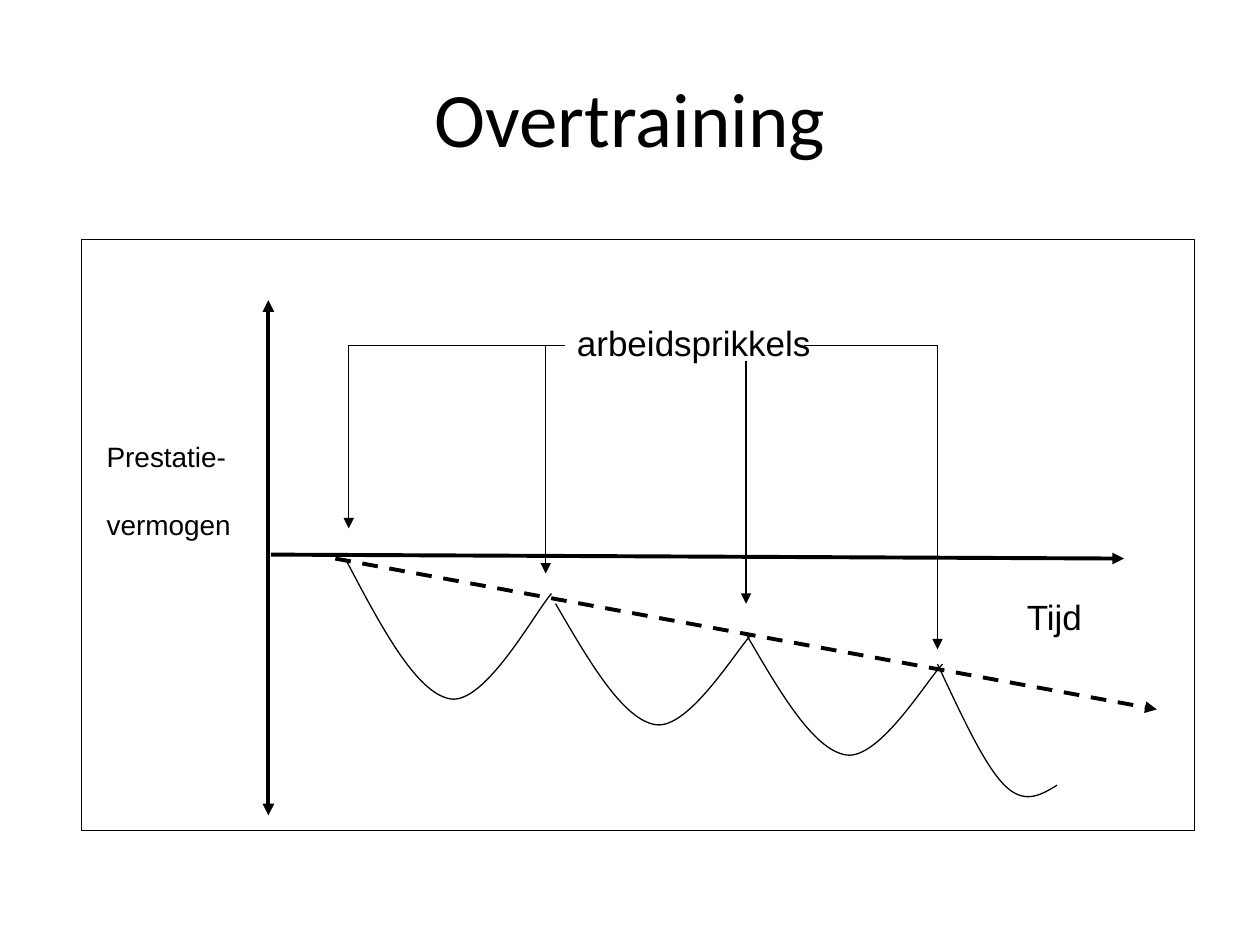
from lxml.etree import SubElement
from pptx import Presentation
from pptx.dml.color import RGBColor
from pptx.enum.dml import MSO_LINE as Dash
from pptx.enum.shapes import MSO_CONNECTOR as Connector, MSO_SHAPE as Shape
from pptx.enum.text import MSO_ANCHOR as Anchor, PP_ALIGN as Align
from pptx.oxml.ns import qn
from pptx.util import Cm, Pt

BLACK, WHITE = "000000", "FFFFFF"
THIN, THICK = 0.75, 2.25

# Bezier points of one training cycle, in cm from its start
CYCLE = [(0, 0), (0.68, 1.17), (1.36, 2.34), (2.02, 2.44),
         (2.69, 2.54), (3.66, 0.91), (3.96, 0.61)]
LAST_CYCLE = [(0, 0), (0.48, 1.02), (0.94, 2.03), (1.35, 2.44),
              (1.75, 2.84), (2.08, 2.64), (2.41, 2.44)]


def colour(value):
    return RGBColor.from_string(value)


def add_span(para, text, font, size):
    span = para.add_run()
    span.text = text
    span.font.name = font
    span.font.size = Pt(size)
    span.font.color.rgb = colour(BLACK)


def add_box(shapes, left, top, width, height, outlined=False):
    box = shapes.add_shape(Shape.RECTANGLE, Cm(left), Cm(top), Cm(width), Cm(height))
    box.shadow.inherit = False
    box.fill.solid()
    box.fill.fore_color.rgb = colour(WHITE)
    if outlined:
        box.line.color.rgb = colour(BLACK)
        box.line.width = Pt(THIN)
    else:
        box.line.fill.background()
    return box


def add_label(shapes, left, top, width, height, lines, size, gap=0):
    frame = add_box(shapes, left, top, width, height).text_frame
    frame.word_wrap = True
    frame.vertical_anchor = Anchor.TOP
    for index, text in enumerate(lines):
        para = frame.add_paragraph() if index else frame.paragraphs[0]
        para.alignment = Align.LEFT
        if index:
            para.space_before = Pt(gap)
        add_span(para, text, "Arial", size)


def add_line(shapes, start, end, width=THIN, arrow=True, dash=None):
    line = shapes.add_connector(Connector.STRAIGHT, *map(Cm, start + end))
    line.line.color.rgb = colour(BLACK)
    line.line.width = Pt(width)
    if dash:
        line.line.dash_style = dash
    if arrow:
        SubElement(line.line._get_or_add_ln(), qn("a:tailEnd"), type="triangle")
    SubElement(line._element.spPr, qn("a:effectLst"))


def add_curve(shapes, left, top, points, stretch=(1, 1)):
    places = [(Cm(left + x * stretch[0]), Cm(top + y * stretch[1])) for x, y in points]
    builder = shapes.build_freeform(*places[0])
    builder.add_line_segments(places[1:], close=False)
    curve = builder.convert_to_shape()
    curve.shadow.inherit = False
    curve.fill.background()
    curve.line.color.rgb = colour(BLACK)
    curve.line.width = Pt(THIN)
    # Turn every three straight segments into one cubic curve
    outline = next(curve._element.iter(qn("a:path")))
    segments = outline.findall(qn("a:lnTo"))
    for first in range(0, len(segments), 3):
        cubic = SubElement(outline, qn("a:cubicBezTo"))
        for segment in segments[first:first + 3]:
            cubic.append(segment[0])
            outline.remove(segment)


def add_title(page, left, top, width, height):
    title = page.shapes.title
    title.left, title.top, title.width, title.height = map(Cm, (left, top, width, height))
    title.text_frame.vertical_anchor = Anchor.MIDDLE
    para = title.text_frame.paragraphs[0]
    para.alignment = Align.CENTER
    add_span(para, "Overtraining", "Calibri", 44)


def add_diagram(page, left, top, width, height):
    shapes = page.shapes.add_group_shape().shapes

    def at(x, y):
        return left + x, top + y

    add_box(shapes, left, top, width, height, outlined=True)

    # Axes and falling trend
    add_line(shapes, at(3.76, 6.43), at(3.76, 1.22), THICK)
    add_line(shapes, at(3.81, 6.35), at(21.01, 6.43), THICK)
    add_line(shapes, at(3.76, 6.43), at(3.76, 11.61), THICK)
    add_line(shapes, at(5.11, 6.43), at(21.67, 9.47), THICK, dash=Dash.DASH)

    # Labels
    add_label(shapes, *at(9.73, 1.52), 5.69, 1.52, ["arbeidsprikkels"], 20)
    add_label(shapes, *at(18.8, 7.04), 2.51, 1.22, ["Tijd"], 20)

    # Bracket and stimulus arrows
    for start, end in ((5.38, 9.73), (14.55, 17.25)):
        add_line(shapes, at(start, 2.13), at(end, 2.13), arrow=False)
    for x, start, end in ((5.38, 2.13, 5.82), (9.35, 2.13, 6.73),
                          (13.39, 2.44, 7.34), (17.25, 2.13, 8.26)):
        add_line(shapes, at(x, start), at(x, end))

    # Training cycles
    add_curve(shapes, *at(5.31, 6.43), CYCLE, stretch=(1.05, 1.16))
    add_curve(shapes, *at(9.55, 7.34), CYCLE)
    add_curve(shapes, *at(13.39, 7.95), CYCLE)
    add_curve(shapes, *at(17.25, 8.56), LAST_CYCLE)

    # Vertical axis label
    add_label(page.shapes, *at(0.25, 3.91), 3.2, 2.21,
              ["Prestatie-", "vermogen"], 16, gap=19.5)


def main():
    deck = Presentation()
    deck.slide_width, deck.slide_height = Cm(25.4), Cm(19.05)
    page = deck.slides.add_slide(deck.slide_layouts[5])
    add_title(page, 1.27, 0.76, 22.86, 3.18)
    add_diagram(page, 1.65, 4.83, 22.43, 11.91)
    deck.save("out.pptx")


if __name__ == "__main__":
    main()
